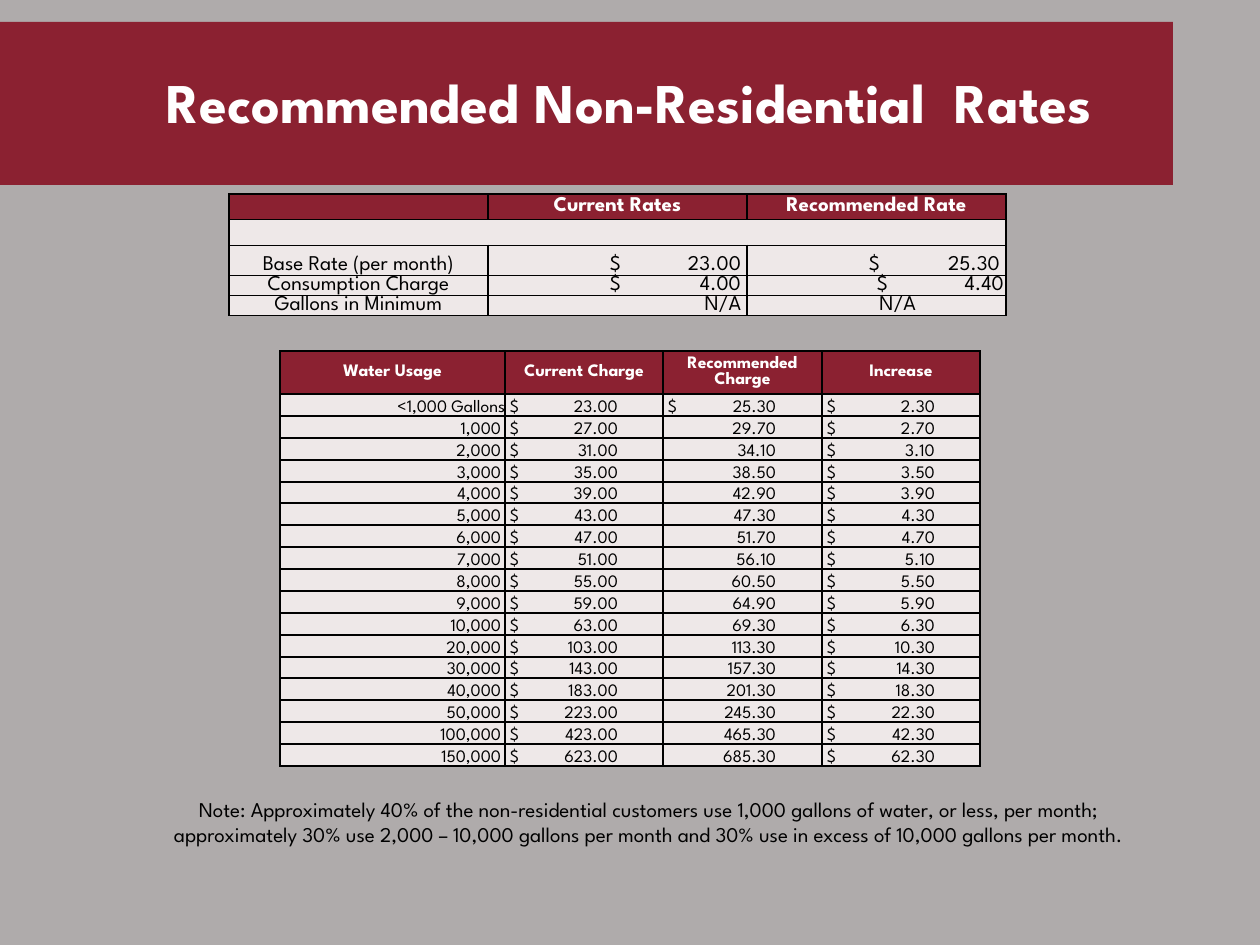
from dataclasses import dataclass

from lxml import etree
from pptx import Presentation
from pptx import util as u
from pptx.dml.color import RGBColor
from pptx.enum import shapes, text
from pptx.oxml import ns

SCALE = 914400 / 126  # EMU in one px


@dataclass(frozen=True)
class Theme:
    font: str = "League Spartan"
    background: str = "AFABAB"
    accent: str = "8B2131"
    cell: str = "EEE8E8"
    light: str = "FFFFFF"
    dark: str = "000000"
    title_size: int = 32
    body_size: int = 12
    small_size: int = 10
    border: float = 1


THEME = Theme()
ALIGN = {"l": text.PP_ALIGN.LEFT, "c": text.PP_ALIGN.CENTER, "r": text.PP_ALIGN.RIGHT}

RATE_HEADS = ["", "Current Rates", "Recommended Rate"]
RATES = [
    ("Base Rate (per month)", "$\t23.00", "$\t25.30"),
    ("Consumption Charge", "$\t4.00", "$\t4.40"),
    ("Gallons in Minimum", "N/A", "N/A"),
]
CHARGE_HEADS = ["Water Usage", "Current Charge", "Recommended Charge", "Increase"]
CHARGES = [
    ("<1,000 Gallons", "23.00", "25.30", "2.30"),
    ("1,000", "27.00", "29.70", "2.70"),
    ("2,000", "31.00", "34.10", "3.10"),
    ("3,000", "35.00", "38.50", "3.50"),
    ("4,000", "39.00", "42.90", "3.90"),
    ("5,000", "43.00", "47.30", "4.30"),
    ("6,000", "47.00", "51.70", "4.70"),
    ("7,000", "51.00", "56.10", "5.10"),
    ("8,000", "55.00", "60.50", "5.50"),
    ("9,000", "59.00", "64.90", "5.90"),
    ("10,000", "63.00", "69.30", "6.30"),
    ("20,000", "103.00", "113.30", "10.30"),
    ("30,000", "143.00", "157.30", "14.30"),
    ("40,000", "183.00", "201.30", "18.30"),
    ("50,000", "223.00", "245.30", "22.30"),
    ("100,000", "423.00", "465.30", "42.30"),
    ("150,000", "623.00", "685.30", "62.30"),
]
NOTE = (
    "Note: Approximately 40% of the non-residential customers use 1,000 gallons "
    "of water, or less, per month; approximately 30% use 2,000 – 10,000 gallons "
    "per month and 30% use in excess of 10,000 gallons per month."
)


def px(n):
    return u.Emu(round(n * SCALE))


def rgb(color):
    return RGBColor.from_string(color)


def style(paragraph, size, color, bold=False, align="c"):
    paragraph.alignment = ALIGN[align]
    for run in paragraph.runs:
        font = run.font
        font.name, font.size, font.bold = THEME.font, u.Pt(size), bold
        font.color.rgb = rgb(color)


def add_band(slide):
    band = slide.shapes.add_shape(
        shapes.MSO_SHAPE.RECTANGLE, 0, px(22), px(1173), px(163)
    )
    band.shadow.inherit = False
    band.fill.solid()
    band.fill.fore_color.rgb = rgb(THEME.accent)
    band.line.fill.background()
    slide.shapes._spTree.insert(2, band._element)  # behind the title


def set_title(slide, words):
    title = slide.shapes.title
    title.left, title.top, title.width, title.height = map(px, (87, 24, 1086, 162))
    frame = title.text_frame
    frame.text = words
    frame.auto_size = text.MSO_AUTO_SIZE.NONE
    frame.vertical_anchor = text.MSO_ANCHOR.MIDDLE
    frame.paragraphs[0].line_spacing = 0.9
    style(frame.paragraphs[0], THEME.title_size, THEME.light, bold=True)


def add_note(slide, words):
    frame = slide.shapes.add_textbox(px(125), px(790), px(1048), px(89)).text_frame
    frame.word_wrap = True
    frame.auto_size = text.MSO_AUTO_SIZE.SHAPE_TO_FIT_TEXT
    frame.text = words
    style(frame.paragraphs[0], THEME.body_size, THEME.dark)


def add_grid(slide, left, top, widths, heights):
    table = slide.shapes.add_table(
        len(heights), len(widths), px(left), px(top), px(sum(widths)), px(sum(heights))
    ).table
    table.horz_banding = False
    for column, width in zip(table.columns, widths):
        column.width = px(width)
    for row, height in zip(table.rows, heights):
        row.height = px(height)
    return table


def add_borders(cell):
    properties = cell._tc.get_or_add_tcPr()
    for side in ("a:lnL", "a:lnR", "a:lnT", "a:lnB"):
        line = etree.SubElement(properties, ns.qn(side), w=str(u.Pt(THEME.border)))
        fill = etree.SubElement(line, ns.qn("a:solidFill"))
        etree.SubElement(fill, ns.qn("a:srgbClr"), val=THEME.dark)


def fill_cell(cell, words, size, align="c", head=False, left=0, right=0, tab=None):
    """Write one cell; tab is a right-aligned stop measured from the left inset."""
    add_borders(cell)
    cell.fill.solid()
    cell.fill.fore_color.rgb = rgb(THEME.accent if head else THEME.cell)
    cell.margin_left, cell.margin_right = px(left), px(right)
    cell.margin_top = cell.margin_bottom = 0
    cell.vertical_anchor = text.MSO_ANCHOR.MIDDLE if head else text.MSO_ANCHOR.BOTTOM
    paragraph = cell.text_frame.paragraphs[0]
    paragraph.text = words
    if tab:
        stops = etree.SubElement(paragraph._p.get_or_add_pPr(), ns.qn("a:tabLst"))
        etree.SubElement(stops, ns.qn("a:tab"), pos=str(px(tab)), algn="r")
    style(paragraph, size, THEME.light if head else THEME.dark, head, align)
    if not words:
        etree.SubElement(paragraph._p, ns.qn("a:endParaRPr"), sz=str(size * 100))


def fill_heads(table, heads, size):
    for col, head in enumerate(heads):
        fill_cell(table.cell(0, col), head, size, head=True)


def add_rates(slide):
    size = THEME.body_size
    table = add_grid(slide, 229, 194, [259] * 3, [20, 20, 30, 20, 20])
    fill_heads(table, RATE_HEADS, size)
    for col in range(3):
        fill_cell(table.cell(1, col), "", size)
    table.cell(1, 0).merge(table.cell(1, 2))
    for row, (label, *values) in enumerate(RATES, start=2):
        fill_cell(table.cell(row, 0), label, size)
        for col, value in enumerate(values, start=1):
            cell = table.cell(row, col)
            if "\t" in value:
                inset = 130 if value == "$\t4.40" else 122
                fill_cell(cell, value, size, "l", left=inset, tab=127 if inset == 130 else 131)
            else:
                fill_cell(cell, value, size, "r", right=6 if col == 1 else 90)


def add_charges(slide):
    size = THEME.small_size
    edges = [round(i * 372 / len(CHARGES)) for i in range(len(CHARGES) + 1)]
    heights = [43] + [low - high for high, low in zip(edges, edges[1:])]
    table = add_grid(slide, 280, 351, [225, 158, 159, 158], heights)
    fill_heads(table, CHARGE_HEADS, size)
    for row, (usage, *amounts) in enumerate(CHARGES, start=1):
        fill_cell(table.cell(row, 0), usage, size, "r", right=0 if row == 1 else 4)
        for col, amount in enumerate(amounts, start=1):
            sign = "" if col == 2 and row > 1 else "$"
            fill_cell(table.cell(row, col), f"{sign}\t{amount}", size, "l", left=5, tab=108)


def main():
    deck = Presentation()
    deck.slide_width, deck.slide_height = px(1260), px(945)
    slide = deck.slides.add_slide(deck.slide_layouts[5])
    slide.background.fill.solid()
    slide.background.fill.fore_color.rgb = rgb(THEME.background)
    add_band(slide)
    set_title(slide, "Recommended Non-Residential  Rates")
    add_rates(slide)
    add_note(slide, NOTE)
    add_charges(slide)
    deck.save("out.pptx")


if __name__ == "__main__":
    main()
